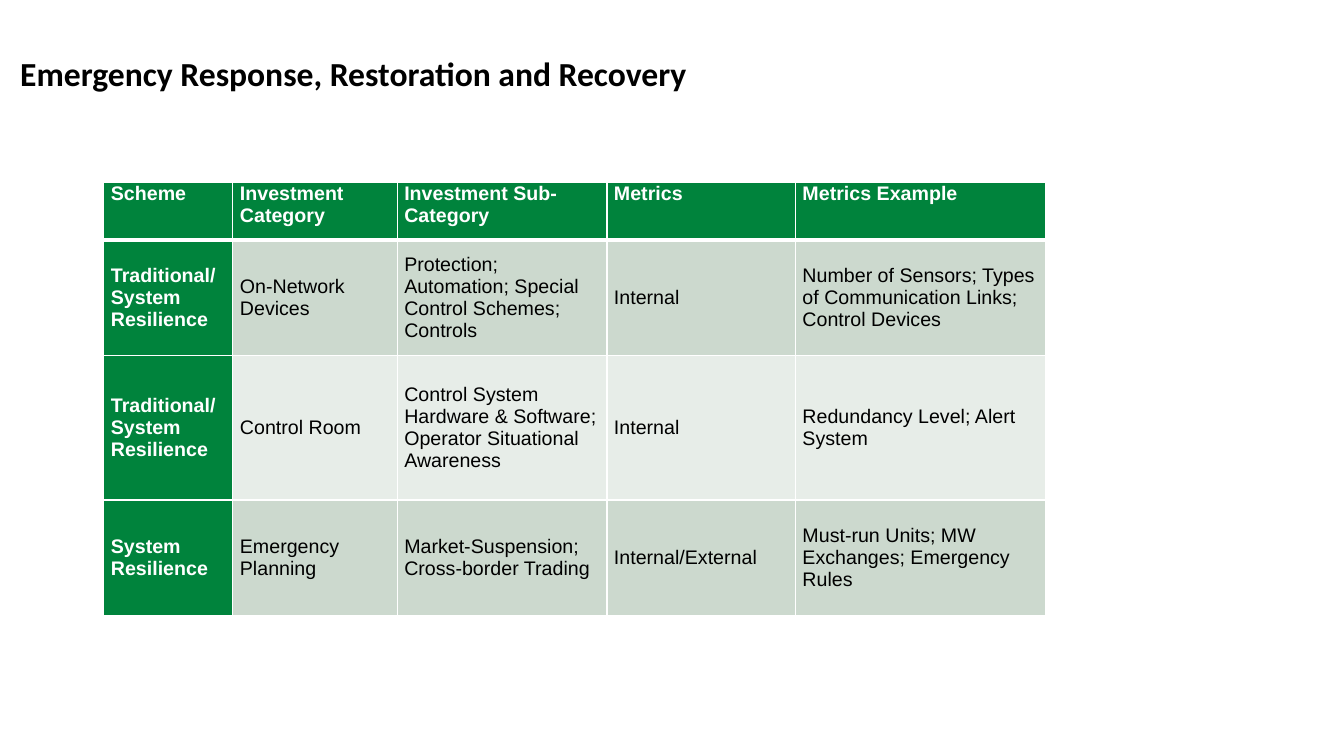
from dataclasses import dataclass
from typing import Any

from lxml import etree
from pptx import Presentation
from pptx.dml.color import RGBColor
from pptx.enum.text import MSO_ANCHOR, PP_ALIGN
from pptx.oxml.ns import qn
from pptx.util import Inches, Pt

TOP, MIDDLE = MSO_ANCHOR.TOP, MSO_ANCHOR.MIDDLE
LEFT = PP_ALIGN.LEFT
TITLE_ONLY = 5


@dataclass(frozen=True)
class Theme:
    green: str = "00833C"
    dark_band: str = "CCD9CE"
    light_band: str = "E7EDE8"
    white: str = "FFFFFF"
    black: str = "000000"
    title_font: str = "Calibri"
    table_font: str = "Arial"
    title_size: int = 24
    table_size: int = 14
    thin_border: int = 1
    header_border: int = 3


@dataclass(frozen=True)
class Investment:
    scheme: str
    category: str
    sub_category: str
    metrics: str
    example: str
    height: float

    def texts(self) -> list[str]:
        return [self.scheme, self.category, self.sub_category, self.metrics, self.example]


THEME = Theme()
COLUMN_WIDTHS = [1.28, 1.63, 2.08, 1.87, 2.48]
INVESTMENTS = [
    Investment("Scheme", "Investment Category", "Investment Sub-Category",
               "Metrics", "Metrics Example", 0.57),
    Investment("Traditional/ System Resilience", "On-Network Devices",
               "Protection; Automation; Special Control Schemes; Controls", "Internal",
               "Number of Sensors; Types of Communication Links; Control Devices", 1.15),
    Investment("Traditional/ System Resilience", "Control Room",
               "Control System Hardware & Software; Operator Situational Awareness",
               "Internal", "Redundancy Level; Alert System", 1.43),
    Investment("System Resilience", "Emergency Planning",
               "Market-Suspension; Cross-border Trading", "Internal/External",
               "Must-run Units; MW Exchanges; Emergency Rules", 1.15),
]


def apply(target: Any, values: dict[str, Any]) -> None:
    for name, value in values.items():
        setattr(target, name, value)


def format_font(font: Any, name: str, size: int, color: str, bold: bool) -> None:
    apply(font, {"name": name, "size": Pt(size), "bold": bold})
    font.color.rgb = RGBColor.from_string(color)


def add_borders(cell: Any, widths: dict[str, int]) -> None:
    properties = cell._tc.get_or_add_tcPr()
    for side, width in widths.items():
        border = etree.SubElement(properties, qn(f"a:ln{side}"), w=str(Pt(width)))
        fill = etree.SubElement(border, qn("a:solidFill"))
        etree.SubElement(fill, qn("a:srgbClr"), val=THEME.white)


def fill_cell(cell: Any, text: str, row: int, column: int) -> None:
    is_heading = row == 0 or column == 0
    band = THEME.dark_band if row % 2 else THEME.light_band
    widths = dict.fromkeys("LRTB", THEME.thin_border)
    if row < 2:
        widths["T" if row else "B"] = THEME.header_border
    add_borders(cell, widths)
    cell.fill.solid()
    cell.fill.fore_color.rgb = RGBColor.from_string(THEME.green if is_heading else band)
    apply(cell, {
        "text": text,
        "vertical_anchor": MIDDLE if row else TOP,
        "margin_left": Inches(0.07),
        "margin_right": Inches(0.07),
        "margin_top": 0,
        "margin_bottom": 0,
    })
    paragraph = cell.text_frame.paragraphs[0]
    paragraph.space_after = Pt(10)
    format_font(paragraph.runs[0].font, THEME.table_font, THEME.table_size,
                THEME.white if is_heading else THEME.black, is_heading)


def add_title(slide: Any) -> None:
    title = slide.shapes.title
    apply(title, {"left": Inches(0.1), "top": Inches(0.47),
                  "width": Inches(9.69), "height": Inches(3.84)})
    frame = title.text_frame
    apply(frame, {"text": "Emergency Response, Restoration and Recovery",
                  "vertical_anchor": TOP, "word_wrap": True})
    paragraph = frame.paragraphs[0]
    paragraph.alignment = LEFT
    format_font(paragraph.runs[0].font, THEME.title_font, THEME.title_size,
                THEME.black, True)


def add_investment_table(slide: Any) -> None:
    heights = [investment.height for investment in INVESTMENTS]
    table = slide.shapes.add_table(
        len(INVESTMENTS), len(COLUMN_WIDTHS), Inches(1.03), Inches(1.81),
        Inches(sum(COLUMN_WIDTHS)), Inches(sum(heights))).table
    table.first_col = True
    for column, width in zip(table.columns, COLUMN_WIDTHS):
        column.width = Inches(width)
    for row, investment in enumerate(INVESTMENTS):
        table.rows[row].height = Inches(investment.height)
        for column, text in enumerate(investment.texts()):
            fill_cell(table.cell(row, column), text, row, column)


def main() -> None:
    presentation = Presentation()
    apply(presentation, {"slide_width": Inches(13.33), "slide_height": Inches(7.5)})
    slide = presentation.slides.add_slide(presentation.slide_layouts[TITLE_ONLY])
    add_title(slide)
    add_investment_table(slide)
    presentation.save("out.pptx")


if __name__ == "__main__":
    main()
